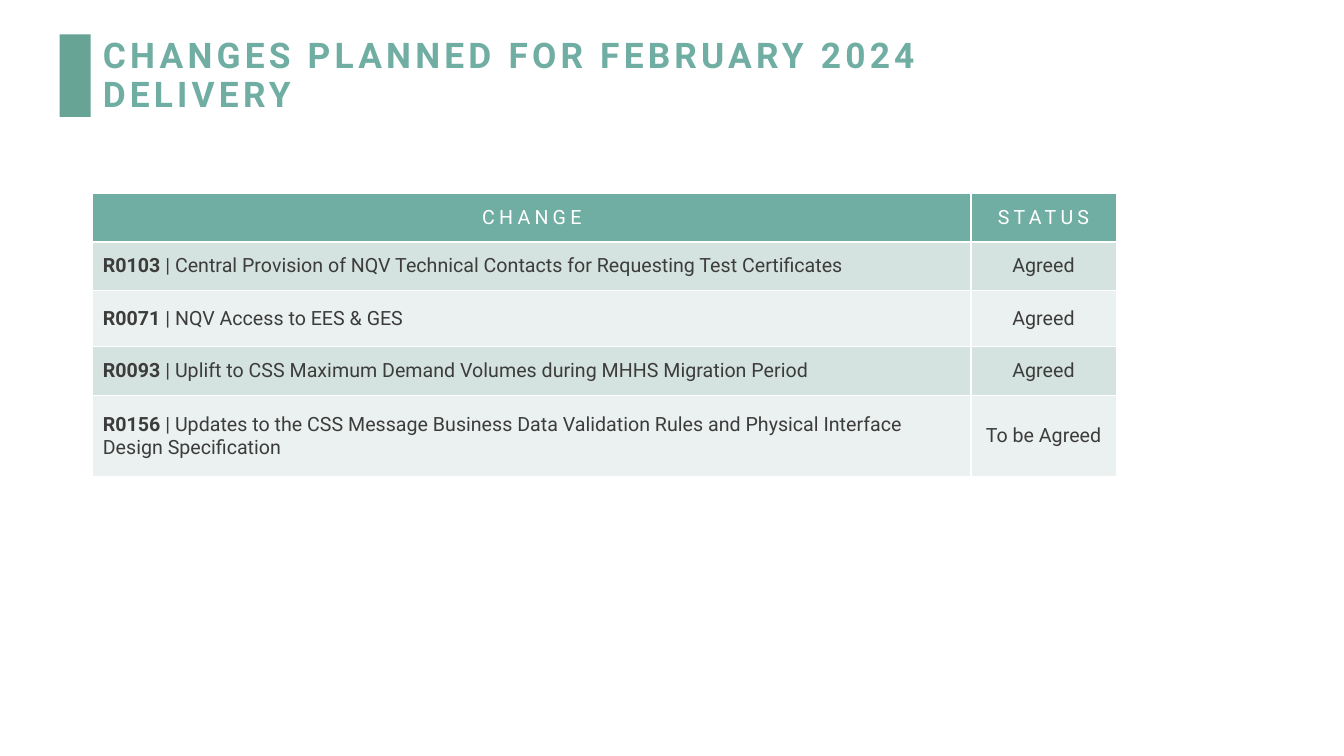
from lxml.etree import SubElement
from pptx import Presentation
from pptx.dml.color import RGBColor as RGB
from pptx.enum.shapes import MSO_SHAPE as Shape
from pptx.enum.text import MSO_ANCHOR as Anchor, MSO_AUTO_SIZE as AutoSize, PP_ALIGN as Align
from pptx.oxml.ns import qn
from pptx.util import Inches, Pt

FONT = "Roboto"
COLORS = {
    "bar": "68A495",
    "teal": "70ADA3",
    "band_dark": "D5E3E0",
    "band_light": "EBF1F0",
    "ink": "3C3C3B",
    "white": "FFFFFF",
}
TITLE = "CHANGES PLANNED FOR FEBRUARY 2024 DELIVERY"
HEADINGS = ("CHANGE", "STATUS")
CHANGES = [
    ("R0103", "Central Provision of NQV Technical Contacts for Requesting Test Certificates", "Agreed"),
    ("R0071", "NQV Access to EES & GES", "Agreed"),
    ("R0093", "Uplift to CSS Maximum Demand Volumes during MHHS Migration Period", "Agreed"),
    ("R0156", "Updates to the CSS Message Business Data Validation Rules and "
              "Physical Interface Design Specification", "To be Agreed"),
]
COLUMN_WIDTHS = (8.71, 1.44)
ROW_HEIGHTS = (0.48, 0.48, 0.56, 0.48, 0.81)


def color(name):
    return RGB.from_string(COLORS[name])


def add_text(para, text, size=14, ink="ink", bold=False, spacing=0):
    """Append a formatted span; spacing is the letter spacing in points."""
    span = para.add_run()
    span.text = text
    span.font.name = FONT
    span.font.size = Pt(size)
    span.font.bold = bold
    span.font.color.rgb = color(ink)
    span._r.get_or_add_rPr().set("spc", str(spacing * 100))


class SlideBuilder:
    def __init__(self, deck):
        self.slide = deck.slides.add_slide(deck.slide_layouts[5])

    def bar(self, left, top, width, height):
        box = self.slide.shapes.add_shape(
            Shape.RECTANGLE, Inches(left), Inches(top), Inches(width), Inches(height))
        box.shadow.inherit = False
        box.fill.solid()
        box.fill.fore_color.rgb = color("bar")
        box.line.fill.background()

    def title(self, text, left, top, width, height):
        box = self.slide.shapes.title
        box.left, box.top = Inches(left), Inches(top)
        box.width, box.height = Inches(width), Inches(height)
        frame = box.text_frame
        frame.word_wrap = True
        frame.auto_size = AutoSize.NONE
        frame.vertical_anchor = Anchor.MIDDLE
        para = frame.paragraphs[0]
        para.alignment = Align.LEFT
        para.line_spacing = 0.9
        add_text(para, text, size=25.2, ink="teal", bold=True, spacing=3)

    def table(self, left, top, widths, heights):
        table = self.slide.shapes.add_table(
            len(heights), len(widths), Inches(left), Inches(top),
            Inches(sum(widths)), Inches(sum(heights))).table
        for column, width in zip(table.columns, widths):
            column.width = Inches(width)
        for row, height in zip(table.rows, heights):
            row.height = Inches(height)
        return table

    def cell(self, cell, fill, align=Align.CENTER):
        """Style a cell and return its paragraph."""
        properties = cell._tc.get_or_add_tcPr()
        for side in "LRTB":
            line = SubElement(properties, qn(f"a:ln{side}"), w=str(Pt(1)))
            paint = SubElement(line, qn("a:solidFill"))
            SubElement(paint, qn("a:srgbClr"), val=COLORS["white"])
        cell.fill.solid()
        cell.fill.fore_color.rgb = color(fill)
        cell.vertical_anchor = Anchor.MIDDLE
        para = cell.text_frame.paragraphs[0]
        para.alignment = align
        return para


def main():
    deck = Presentation()
    deck.slide_width, deck.slide_height = Inches(13.33), Inches(7.5)
    page = SlideBuilder(deck)

    # Heading
    page.bar(0.59, 0.34, 0.31, 0.82)
    page.title(TITLE, 0.92, 0.4, 10.15, 0.72)

    # Table header
    table = page.table(0.92, 1.92, COLUMN_WIDTHS, ROW_HEIGHTS)
    for column, heading in enumerate(HEADINGS):
        para = page.cell(table.cell(0, column), "teal")
        add_text(para, heading, ink="white", spacing=3)

    # Changes in alternating bands
    for row, (number, name, status) in enumerate(CHANGES, start=1):
        band = "band_dark" if row % 2 else "band_light"
        para = page.cell(table.cell(row, 0), band, align=Align.LEFT)
        add_text(para, number, bold=True)
        add_text(para, f" | {name}")
        add_text(page.cell(table.cell(row, 1), band), status)

    deck.save("out.pptx")


if __name__ == "__main__":
    main()
